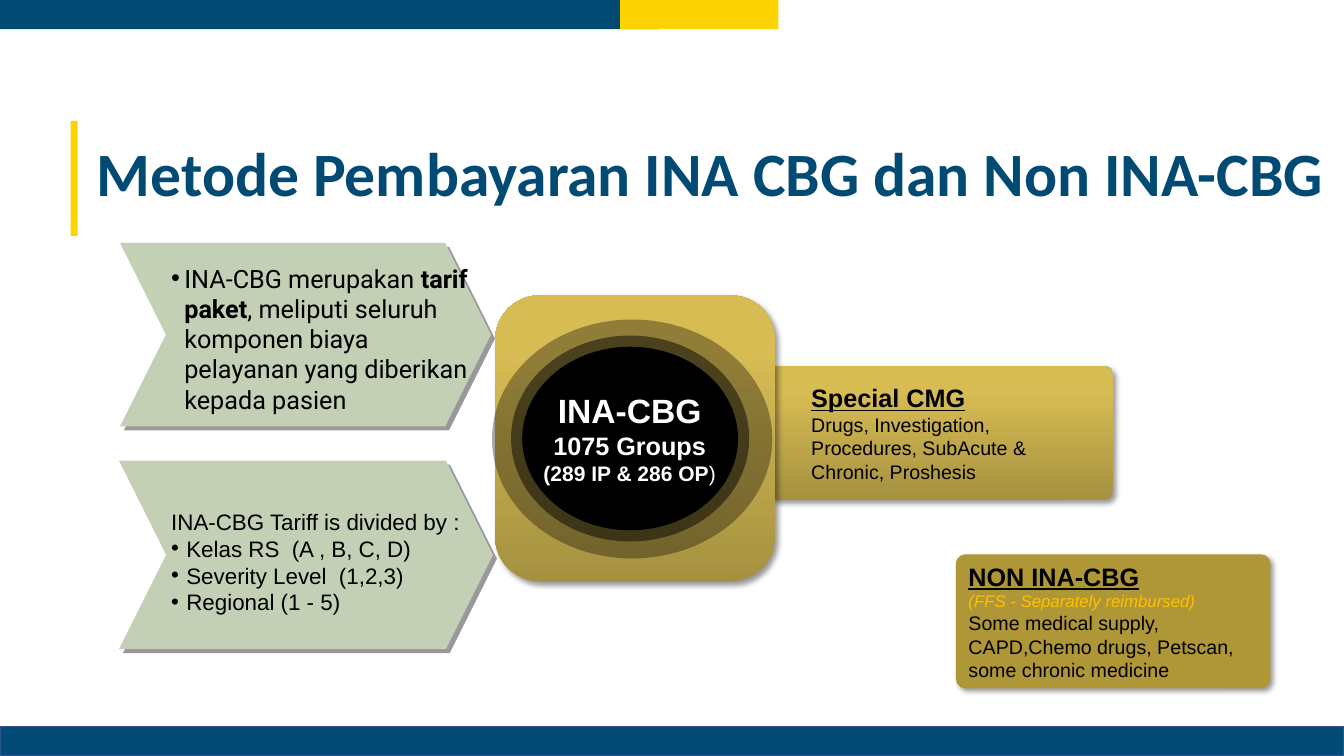
from lxml import etree
from pptx import Presentation
from pptx.dml.color import RGBColor
from pptx.enum.shapes import MSO_SHAPE
from pptx.enum.text import MSO_ANCHOR, MSO_AUTO_SIZE, PP_ALIGN
from pptx.oxml.ns import qn
from pptx.util import Inches, Pt

RECT = MSO_SHAPE.RECTANGLE
ROUNDED = MSO_SHAPE.ROUNDED_RECTANGLE
CHEVRON = MSO_SHAPE.CHEVRON
OVAL = MSO_SHAPE.OVAL
MIDDLE = MSO_ANCHOR.MIDDLE
LEFT, CENTER = PP_ALIGN.LEFT, PP_ALIGN.CENTER
NO_FIT = MSO_AUTO_SIZE.NONE

BLUE, YELLOW, GOLD, SAGE = "004A74", "FDD300", "AF9738", "C4D0B5"
BLACK, WHITE, AMBER = "000000", "FFFFFF", "FFC000"
GOLD_STOPS = [(0, "A59140"), (80, "D7BC54"), (100, "DABF52")]
SOFT, HARD = (4, 3), (0, 4)


def rgb(value):
    """Turn a hex string into a colour."""
    return RGBColor.from_string(value)


def add_node(parent, tag, **attributes):
    """Append a drawing element and return it."""
    node = etree.SubElement(parent, qn(tag))
    for key, value in attributes.items():
        node.set(key, str(value))
    return node


class SlideBuilder:
    """Draws styled elements on the current slide."""

    def __init__(self, slide):
        """Keep the slide and the default text style."""
        self.slide = slide
        self.style = {"size": 18, "font": "Arial", "color": BLACK,
                      "bold": False, "italic": False, "underline": False}

    def title(self, box, text):
        """Place the title placeholder and set its text."""
        heading = self.slide.shapes.title
        heading.left, heading.top, heading.width, heading.height = map(Inches, box)
        frame = heading.text_frame
        frame.word_wrap = True
        frame.auto_size = NO_FIT
        frame.vertical_anchor = MIDDLE
        frame.margin_right = 0
        paragraph = frame.paragraphs[0]
        paragraph.alignment = LEFT
        paragraph.line_spacing = 0.9
        self.add_words(paragraph, text, size=44, font="Calibri", color=BLUE, bold=True)

    def shape(self, kind, box, fill, adjust=None, shadow=None, opacity=None):
        """Add a preset shape with a plain or gradient fill."""
        shape = self.slide.shapes.add_shape(kind, *map(Inches, box))
        shape.shadow.inherit = False
        shape.line.fill.background()
        if adjust is not None:
            shape.adjustments[0] = adjust
        properties = shape._element.spPr
        if isinstance(fill, list):
            shape.fill.gradient()
            shape.fill.gradient_angle = 90
            stops = properties.find(".//" + qn("a:gsLst"))
            for stop in list(stops):
                stops.remove(stop)
            for position, color in fill:
                stop = add_node(stops, "a:gs", pos=position * 1000)
                add_node(stop, "a:srgbClr", val=color)
        else:
            shape.fill.solid()
            shape.fill.fore_color.rgb = rgb(fill)
        if opacity is not None:
            self.fade(properties.find(qn("a:solidFill")), opacity)
        if shadow:
            blur, distance = shadow
            outer = add_node(properties.find(qn("a:effectLst")), "a:outerShdw",
                             blurRad=Pt(blur), dist=Pt(distance),
                             dir=45 * 60000, algn="tl", rotWithShape=0)
            color = add_node(outer, "a:srgbClr", val=BLACK)
            add_node(color, "a:alpha", val=40000)
        return shape

    def fade(self, solid_fill, opacity):
        """Set the opacity of a solid fill in percent."""
        add_node(solid_fill.find(qn("a:srgbClr")), "a:alpha", val=opacity * 1000)

    def outline(self, shape, color, width, opacity=100):
        """Give a shape a coloured outline."""
        shape.line.color.rgb = rgb(color)
        shape.line.width = Pt(width)
        line = shape._element.spPr.find(qn("a:ln"))
        self.fade(line.find(qn("a:solidFill")), opacity)

    def text(self, box, paragraphs, wrap=True, **layout):
        """Add a text box."""
        label = self.slide.shapes.add_textbox(*map(Inches, box))
        self.fill_text(label.text_frame, paragraphs, wrap, **layout)

    def fill_text(self, frame, paragraphs, wrap=True, align=LEFT, indent=0, bullets=(), hang=0):
        """Fill a frame with paragraphs, each a list of (text, style) runs."""
        frame.word_wrap = wrap
        for index, runs in enumerate(paragraphs):
            paragraph = frame.paragraphs[0] if index == 0 else frame.add_paragraph()
            paragraph.alignment = align
            settings = paragraph._p.get_or_add_pPr()
            if indent:
                settings.set("marL", str(Inches(indent)))
            if index in bullets:
                settings.set("marL", str(Inches(hang)))
                settings.set("indent", str(-Inches(hang)))
                add_node(settings, "a:buFont", typeface="Arial")
                add_node(settings, "a:buChar", char="•")
            for words, style in runs:
                self.add_words(paragraph, words, **style)

    def add_words(self, paragraph, words, **changes):
        """Add one run in the default style with changes."""
        style = {**self.style, **changes}
        run = paragraph.add_run()
        run.text = words
        font = run.font
        font.size, font.name = Pt(style["size"]), style["font"]
        font.color.rgb = rgb(style["color"])
        font.bold, font.italic = style["bold"], style["italic"]
        font.underline = style["underline"]


def main():
    """Build the payment method slide."""
    deck = Presentation()
    deck.slide_width, deck.slide_height = Inches(13.33), Inches(7.5)
    builder = SlideBuilder(deck.slides.add_slide(deck.slide_layouts[5]))

    builder.title((0.86, 1.06, 12.47, 1.39), "Metode Pembayaran INA CBG dan Non INA-CBG")
    builder.shape(RECT, (0, 0, 6.53, 0.29), BLUE)
    builder.shape(RECT, (6.15, 0, 1.57, 0.29), YELLOW)
    builder.shape(RECT, (0.7, 1.2, 0.07, 1.14), YELLOW)
    footer = builder.shape(RECT, (0, 7.21, 13.33, 0.29), BLUE)
    builder.outline(footer, "325491", 1)

    heading = {"bold": True, "underline": True}
    body = {"size": 14}
    cards = [
        ((7.62, 3.63, 3.42, 1.33), GOLD_STOPS, 0.3, [
            [("Special CMG", heading)],
            [("Drugs, Investigation, Procedures, SubAcute & Chronic, Proshesis", body)]]),
        ((9.48, 5.5, 3.12, 1.33), GOLD, 0, [
            [("NON INA-CBG", heading)],
            [("(FFS - Separately reimbursed)", {"size": 12, "color": AMBER, "italic": True})],
            [("Some medical supply, CAPD,Chemo drugs, Petscan, some chronic medicine", body)]]),
    ]
    for box, fill, indent, paragraphs in cards:
        card = builder.shape(ROUNDED, box, fill, 0.07, SOFT)
        card.text_frame.vertical_anchor = MIDDLE
        card.text_frame.margin_right = Inches(0.1 + indent / 2)
        builder.fill_text(card.text_frame, paragraphs, indent=indent)

    builder.shape(ROUNDED, (4.91, 2.93, 2.78, 2.84), GOLD_STOPS, 0.16, SOFT)
    builder.shape(OVAL, (4.88, 3.17, 2.78, 2.37), BLACK, opacity=33)
    core = builder.shape(OVAL, (5.18, 3.44, 2.14, 1.82), BLACK)
    builder.outline(core, BLACK, 16, 47)
    white = {"color": WHITE, "bold": True}
    builder.text((5.28, 3.82, 1.93, 1.06), [
        [("INA-CBG", {**white, "size": 24})],
        [("1075 Groups", white)],
        [("(289 IP & 286 OP", {**white, "size": 15}), (")", {"size": 15, "color": WHITE})],
    ], wrap=False, align=CENTER)

    for box in [(1.19, 2.41, 3.68, 1.82), (1.18, 4.57, 3.71, 1.87)]:
        builder.shape(CHEVRON, box, SAGE, 0.25, HARD)

    roboto = {"font": "Roboto"}
    builder.text((1.6, 2.56, 3.18, 1.62), [[
        ("INA-CBG merupakan ", roboto),
        ("tarif paket", {**roboto, "bold": True}),
        (", meliputi seluruh komponen biaya pelayanan yang diberikan kepada pasien", roboto),
    ]], bullets=(0,), hang=0.13)

    tariff_lines = ["INA-CBG Tariff is divided by :", "Kelas RS  (A , B, C, D)",
                    "Severity Level  (1,2,3)", "Regional (1 - 5)"]
    builder.text((1.6, 4.99, 3.12, 1.18), [[(line, {"size": 16})] for line in tariff_lines],
                 bullets=(1, 2, 3), hang=0.15)

    deck.save("out.pptx")


if __name__ == "__main__":
    main()
